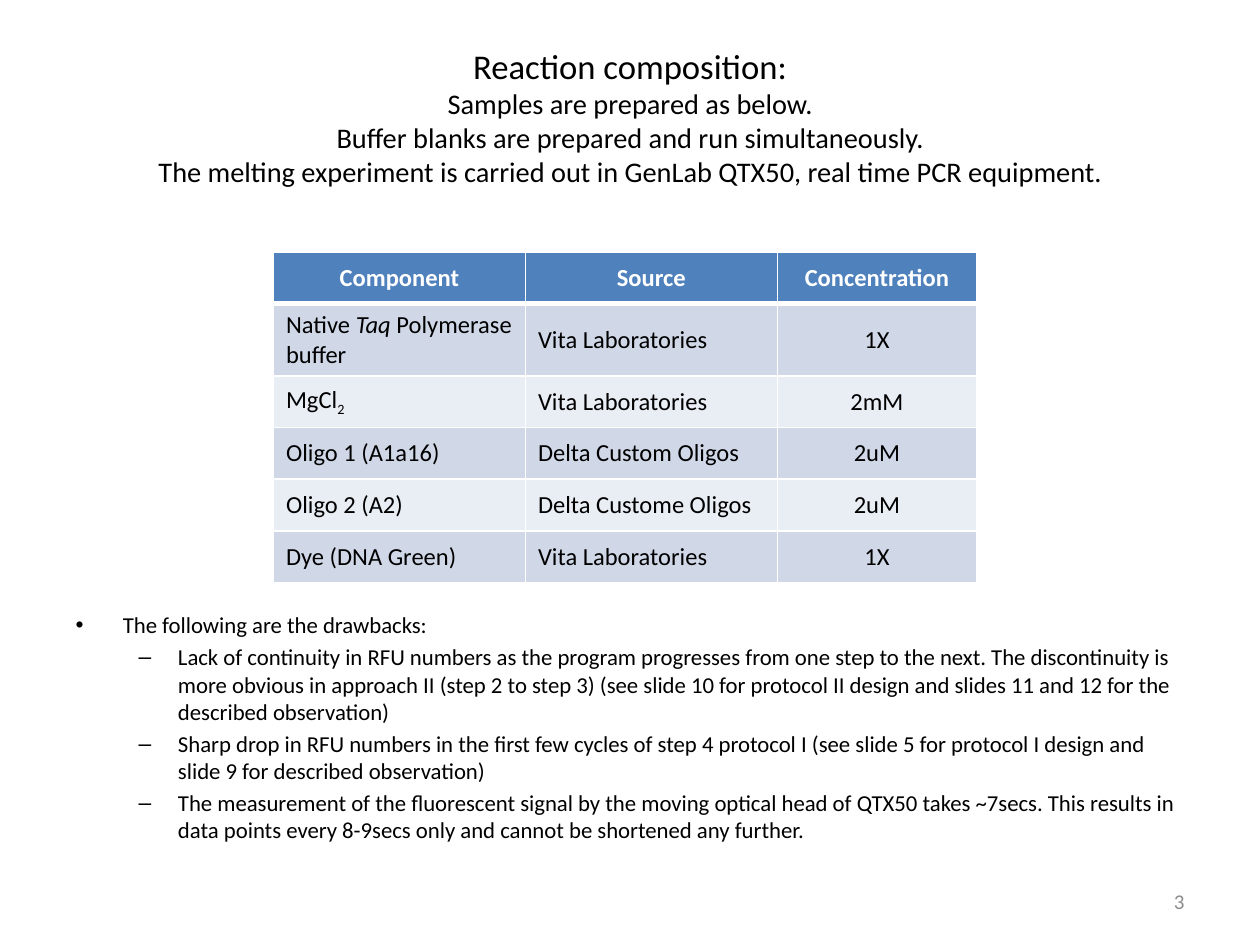
import dataclasses

import lxml.etree
import pptx
import pptx.dml.color
import pptx.enum.text
import pptx.oxml.ns
import pptx.util

qn = pptx.oxml.ns.qn
ALIGN = pptx.enum.text.PP_ALIGN
MIDDLE = pptx.enum.text.MSO_ANCHOR.MIDDLE
PX = 9144


@dataclasses.dataclass(frozen=True)
class Theme:
    font: str = "Calibri"
    ink: str = "000000"
    white: str = "FFFFFF"
    muted: str = "8C8C8C"
    header: str = "4F81BD"
    bands: tuple = ("D0D8E8", "E9EDF4")
    heading: float = 19.8
    subheading: float = 16.2
    cell: float = 14
    body: float = 13
    number: float = 12
    rule: float = 1
    header_rule: float = 3


class SlideBuilder:
    def __init__(self, slide, theme):
        self.slide = slide
        self.theme = theme

    def place(self, shape, box):
        shape.left, shape.top, shape.width, shape.height = (n * PX for n in box)

    def style(self, run, size, color, bold=False):
        run.font.name = self.theme.font
        run.font.size = pptx.util.Pt(size)
        run.font.bold = bold
        run.font.color.rgb = pptx.dml.color.RGBColor.from_string(color)

    def title(self, lines, box):
        heading = self.slide.shapes.title
        self.place(heading, box)
        frame = heading.text_frame
        frame.auto_size = pptx.enum.text.MSO_AUTO_SIZE.NONE
        frame.vertical_anchor = MIDDLE
        frame.text = "\v".join(lines)
        paragraph = frame.paragraphs[0]
        paragraph.alignment = ALIGN.CENTER
        sizes = [self.theme.heading] + [self.theme.subheading] * (len(lines) - 1)
        for run, size in zip(paragraph.runs, sizes):
            self.style(run, size, self.theme.ink)
        for line_break, size in zip(paragraph._p.findall(qn("a:br")), sizes):
            lxml.etree.SubElement(line_break, qn("a:rPr"), sz=str(round(size * 100)))

    def bullets(self, items, box):
        body = self.slide.placeholders[1]
        self.place(body, box)
        frame = body.text_frame
        frame.auto_size = pptx.enum.text.MSO_AUTO_SIZE.NONE
        frame.text = "\n".join(text for _, text in items)
        for paragraph, (level, _) in zip(frame.paragraphs, items):
            paragraph.level = level
            for run in paragraph.runs:
                self.style(run, self.theme.body, self.theme.ink)

    def borders(self, cell, top, bottom):
        properties = cell._tc.get_or_add_tcPr()
        rule = self.theme.rule
        for side, width in (("L", rule), ("R", rule), ("T", top), ("B", bottom)):
            line = lxml.etree.SubElement(
                properties, qn(f"a:ln{side}"), w=str(pptx.util.Pt(width)))
            fill = lxml.etree.SubElement(line, qn("a:solidFill"))
            lxml.etree.SubElement(fill, qn("a:srgbClr"), val=self.theme.white)

    def fill_cell(self, cell, content, row, column):
        theme = self.theme
        is_header = row == 0
        self.borders(cell,
                     theme.header_rule if row == 1 else theme.rule,
                     theme.header_rule if is_header else theme.rule)
        cell.fill.solid()
        cell.fill.fore_color.rgb = pptx.dml.color.RGBColor.from_string(
            theme.header if is_header else theme.bands[(row - 1) % 2])
        cell.vertical_anchor = MIDDLE
        paragraph = cell.text_frame.paragraphs[0]
        centred = is_header or column == 2
        paragraph.alignment = ALIGN.CENTER if centred else ALIGN.LEFT
        parts = [(content, "")] if isinstance(content, str) else content
        for text, mark in parts:
            run = paragraph.add_run()
            run.text = text
            self.style(run, theme.cell, theme.white if is_header else theme.ink, is_header)
            if mark == "italic":
                run.font.italic = True
            elif mark == "subscript":
                run._r.get_or_add_rPr().set("baseline", "-25000")

    def table(self, rows, left, top, widths, row_height):
        table = self.slide.shapes.add_table(
            len(rows), len(widths), left * PX, top * PX,
            sum(widths) * PX, row_height * len(rows) * PX).table
        table.horz_banding = False
        for column, width in zip(table.columns, widths):
            column.width = width * PX
        for r, row in enumerate(rows):
            for c, content in enumerate(row):
                self.fill_cell(table.cell(r, c), content, r, c)

    def page_number(self, number, box):
        footer = self.slide.shapes.add_textbox(*(n * PX for n in box))
        frame = footer.text_frame
        frame.word_wrap = True
        frame.vertical_anchor = MIDDLE
        frame.text = number
        frame.paragraphs[0].alignment = ALIGN.RIGHT
        self.style(frame.paragraphs[0].runs[0], self.theme.number, self.theme.muted)


TITLE_LINES = [
    "Reaction composition:",
    "Samples are prepared as below.",
    "Buffer blanks are prepared and run simultaneously.",
    "The melting experiment is carried out in GenLab QTX50, real time PCR equipment.",
]

COMPONENTS = [
    ("Component", "Source", "Concentration"),
    ([("Native ", ""), ("Taq", "italic"), (" Polymerase buffer", "")],
     "Vita Laboratories", "1X"),
    ([("MgCl", ""), ("2", "subscript")], "Vita Laboratories", "2mM"),
    ("Oligo 1 (A1a16)", "Delta Custom Oligos", "2uM"),
    ("Oligo 2 (A2)", "Delta Custome Oligos", "2uM"),
    ("Dye (DNA Green)", "Vita Laboratories", "1X"),
]

DRAWBACKS = [
    (0, "The following are the drawbacks:"),
    (1, "Lack of continuity in RFU numbers as the program progresses from one step to "
        "the next. The discontinuity is more obvious in approach II (step 2 to step 3) "
        "(see slide 10 for protocol II design and slides 11 and 12 for the described "
        "observation)"),
    (1, "Sharp drop in RFU numbers in the first few cycles of step 4 protocol I (see "
        "slide 5 for protocol I design and slide 9 for described observation)"),
    (1, "The measurement of the fluorescent signal by the moving optical head of QTX50 "
        "takes ~7secs. This results in data points every 8-9secs only and cannot be "
        "shortened any further."),
]


def main():
    deck = pptx.Presentation()
    deck.slide_width, deck.slide_height = 1000 * PX, 750 * PX
    builder = SlideBuilder(deck.slides.add_slide(deck.slide_layouts[1]), Theme())
    builder.title(TITLE_LINES, (50, 30, 900, 125))
    builder.bullets(DRAWBACKS, (50, 480, 900, 187))
    builder.table(COMPONENTS, 217, 200, (200, 200, 158), 41)
    builder.page_number("3", (717, 695, 233, 40))
    deck.save("out.pptx")


if __name__ == "__main__":
    main()
